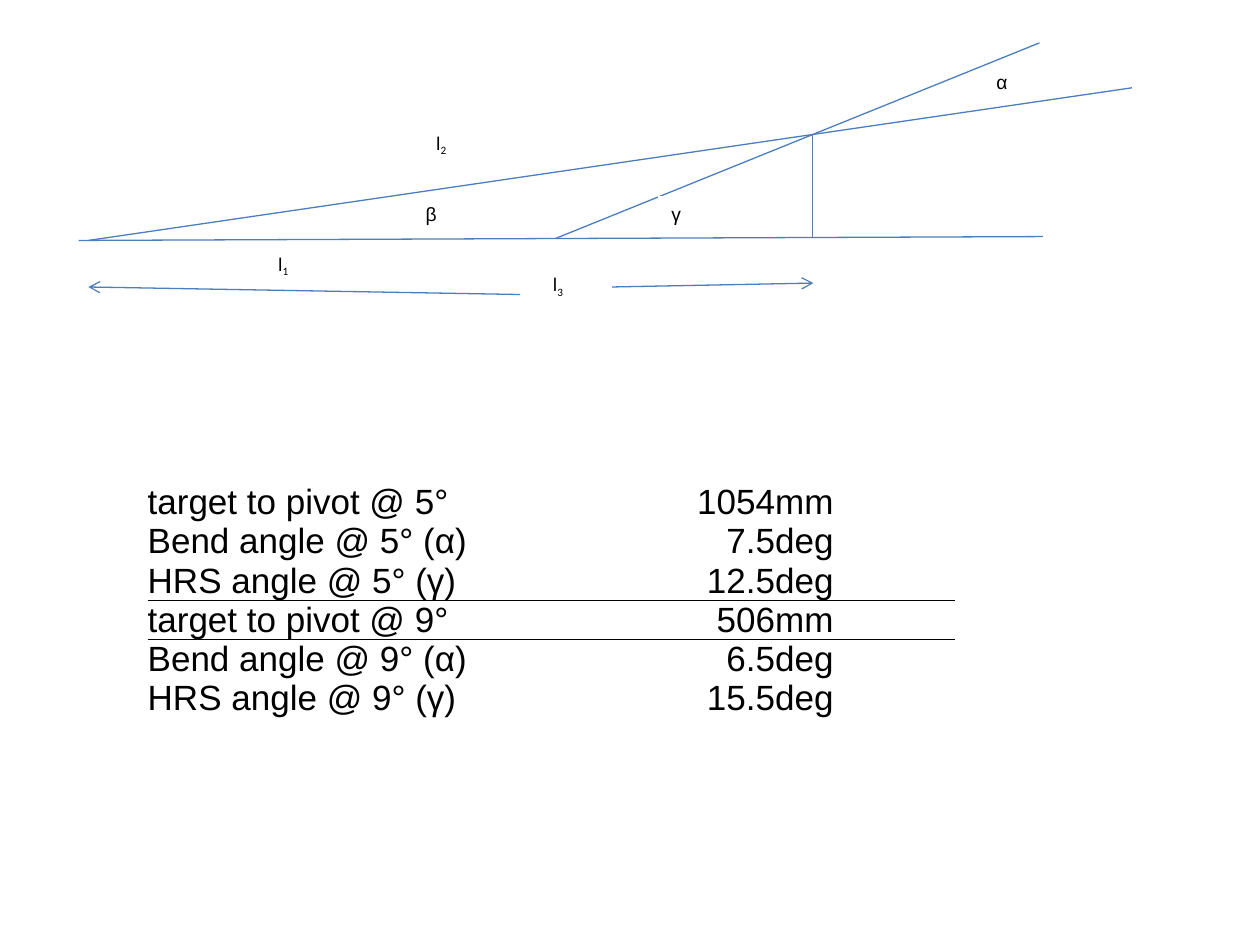
"""Builds a slide with the bend-angle geometry sketch and its table of values."""
from lxml.etree import SubElement
from pptx import Presentation
from pptx.dml.color import RGBColor
from pptx.enum.shapes import MSO_CONNECTOR as Connector, MSO_SHAPE as Shape
from pptx.enum.text import MSO_ANCHOR as Anchor, PP_ALIGN as Align
from pptx.oxml.ns import qn
from pptx.util import Pt

BLUE, BLACK, WHITE = "4B7EBC", "000000", "FFFFFF"
PLAIN_TABLE_STYLE = "{2D5ABB26-0587-4C30-8999-92F81FD0307C}"

SKETCH = [
    ("label", "α", "", (562.3, 36.7, 28, 31), True),
    ("label", "β", "", (236.2, 112.3, 28, 31), False),
    ("line", (44.9, 137.4), (596, 135.2), False),
    ("line", (317.7, 136.2), (594, 24.5), False),
    ("line", (50.5, 137.4), (646.8, 50.2), False),
    ("label", "l", "1", (151.9, 140.4, 31.5, 28), True),
    ("label", "l", "2", (242.2, 71.3, 31, 28), True),
    ("line", (464.2, 77), (464.2, 136.2), False),
    ("label", "l", "3", (308.9, 152, 31, 28), True),
    ("line", (349.8, 164), (464.8, 161.8), True),
    ("line", (297.2, 168.3), (50.5, 164), True),
    ("label", "γ", "", (376.6, 112.3, 28, 21.6), False),
]

TABLE_LEFT, TABLE_TOP, ROW_HEIGHT = 84.4, 275.9, 22.4
COLUMN_WIDTHS = [255.6, 103, 103]
ALIGNMENTS = [Align.LEFT, Align.RIGHT, Align.LEFT]
SETTINGS = [
    ("5°", "1054", "7.5", "12.5"),
    ("9°", "506", "6.5", "15.5"),
]
QUANTITIES = [
    ("target to pivot @ {}", "mm"),
    ("Bend angle @ {} (α)", "deg"),
    ("HRS angle @ {} (γ)", "deg"),
]


def color(value):
    return RGBColor.from_string(value)


def add_run(paragraph, text, size, font="Arial"):
    run = paragraph.add_run()
    run.text = text
    run.font.size = Pt(size)
    run.font.name = font
    run.font.color.rgb = color(BLACK)
    return run


def add_label(slide, symbol, subscript, box, filled):
    shape = slide.shapes.add_shape(Shape.RECTANGLE, *map(Pt, box))
    shape.shadow.inherit = False
    if filled:
        shape.fill.solid()
        shape.fill.fore_color.rgb = color(WHITE)
    else:
        shape.fill.background()
    shape.line.color.rgb = color(WHITE)
    shape.line.width = Pt(0.75)
    frame = shape.text_frame
    frame.word_wrap = True
    frame.vertical_anchor = Anchor.TOP
    paragraph = frame.paragraphs[0]
    paragraph.alignment = Align.LEFT
    font = "Calibri" if subscript else "Arial"
    add_run(paragraph, symbol, 11, font)
    if subscript:
        run = add_run(paragraph, subscript, 11, font)
        run.font._element.set("baseline", "-25000")


def add_line(slide, start, end, arrow):
    line = slide.shapes.add_connector(Connector.STRAIGHT, *map(Pt, start + end))
    line.line.color.rgb = color(BLUE)
    line.line.width = Pt(0.75)
    if arrow:
        SubElement(line.line._get_or_add_ln(), qn("a:tailEnd"), type="arrow")
    SubElement(line._element.spPr, qn("a:effectLst"))


def add_border(cell, side):
    border = SubElement(cell._tc.get_or_add_tcPr(), qn(f"a:{side}"), w=str(Pt(1)))
    fill = SubElement(border, qn("a:solidFill"))
    SubElement(fill, qn("a:srgbClr"), val=BLACK)


def add_values(slide):
    rows = [
        (name.format(angle), value, unit)
        for angle, *values in SETTINGS
        for (name, unit), value in zip(QUANTITIES, values)
    ]
    frame = slide.shapes.add_table(
        len(rows), len(COLUMN_WIDTHS), Pt(TABLE_LEFT), Pt(TABLE_TOP),
        Pt(sum(COLUMN_WIDTHS)), Pt(ROW_HEIGHT * len(rows)))
    table = frame.table
    table.first_row = table.horz_banding = False
    table._tbl.tblPr.find(qn("a:tableStyleId")).text = PLAIN_TABLE_STYLE
    for column, width in zip(table.columns, COLUMN_WIDTHS):
        column.width = Pt(width)
    group = len(QUANTITIES)
    borders = {group - 1: "lnB", group: "lnT"}
    for row_index, texts in enumerate(rows):
        table.rows[row_index].height = Pt(ROW_HEIGHT)
        for column_index, text in enumerate(texts):
            cell = table.cell(row_index, column_index)
            cell.margin_left = cell.margin_right = Pt(0)
            cell.margin_top = cell.margin_bottom = Pt(0)
            cell.vertical_anchor = Anchor.BOTTOM
            if row_index in borders:
                add_border(cell, borders[row_index])
            cell.fill.background()
            paragraph = cell.text_frame.paragraphs[0]
            paragraph.alignment = ALIGNMENTS[column_index]
            add_run(paragraph, text, 20)


def main():
    presentation = Presentation()
    presentation.slide_width, presentation.slide_height = Pt(720), Pt(540)
    slide = presentation.slides.add_slide(presentation.slide_layouts[6])
    builders = {"label": add_label, "line": add_line}
    for kind, *details in SKETCH:
        builders[kind](slide, *details)
    add_values(slide)
    presentation.save("out.pptx")


if __name__ == "__main__":
    main()
